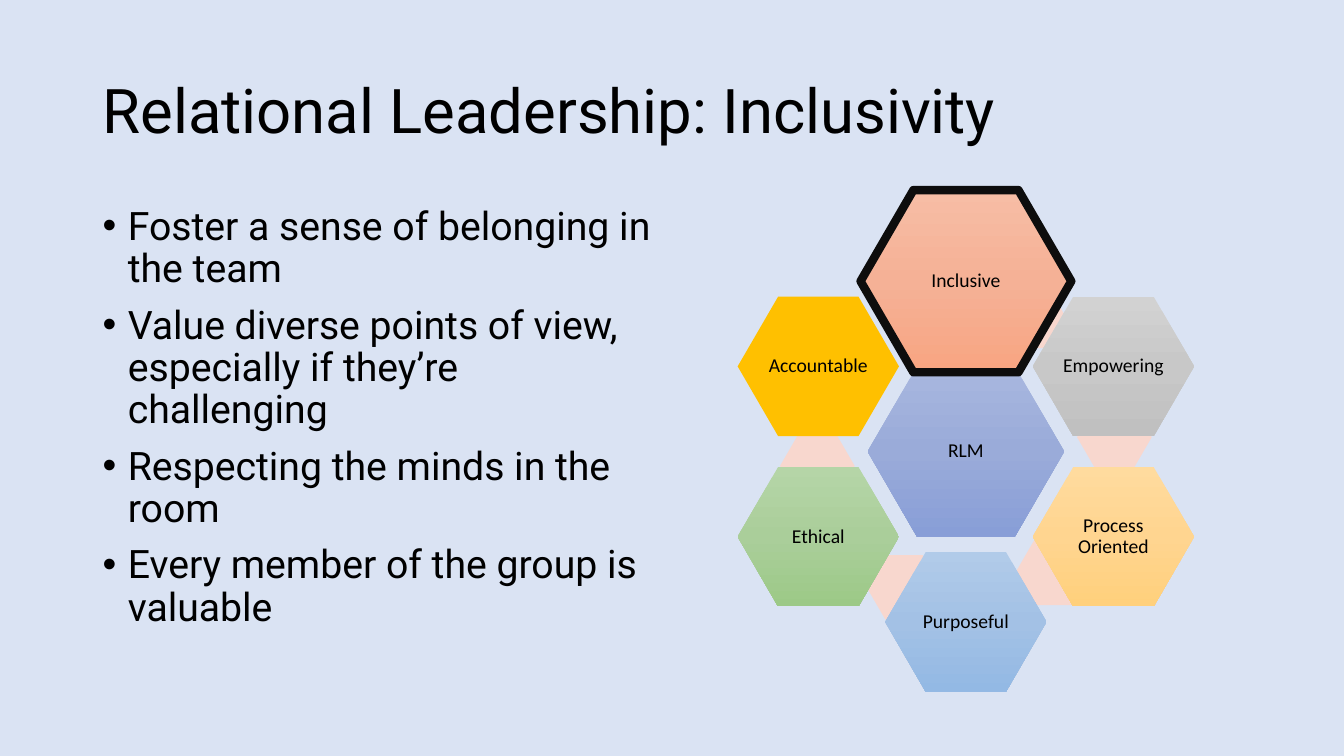
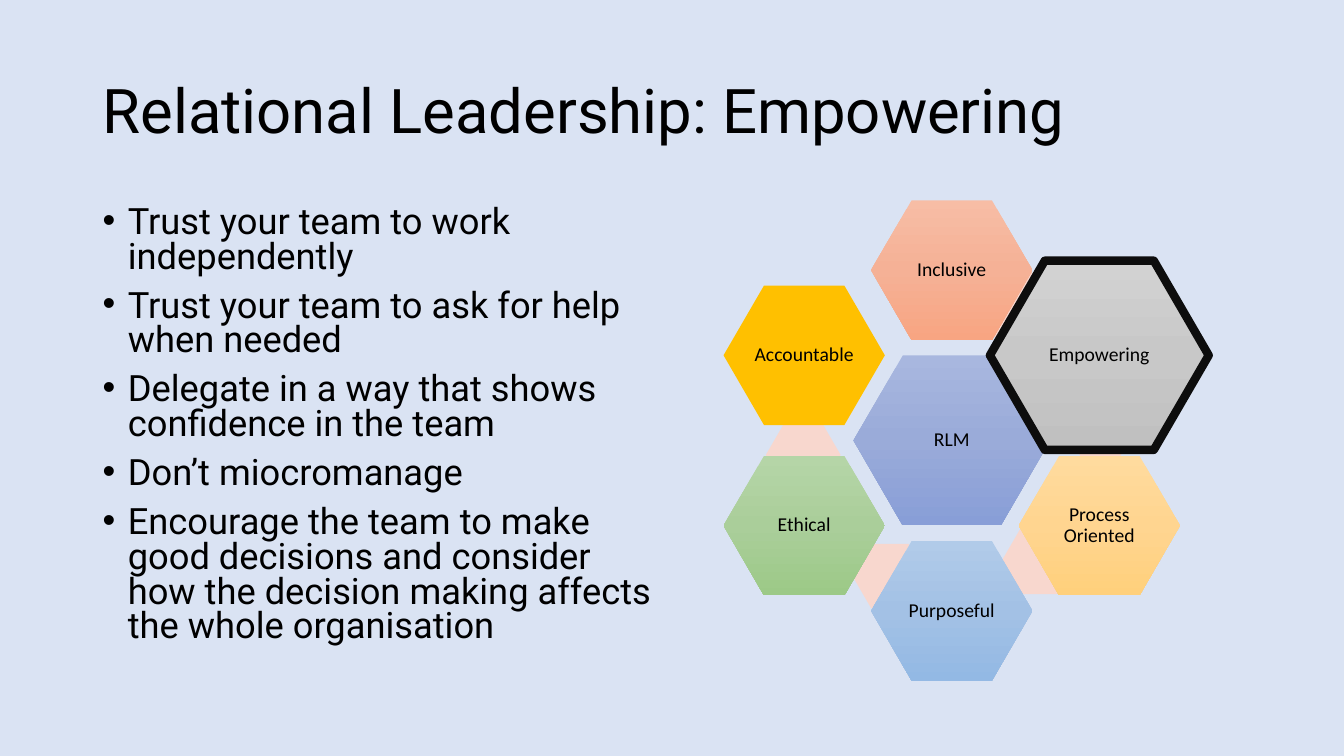
from copy import deepcopy
from math import cos, radians, sin

from lxml.etree import SubElement
from pptx import Presentation
from pptx.dml.color import RGBColor
from pptx.enum.shapes import MSO_SHAPE
from pptx.enum.text import MSO_ANCHOR, PP_ALIGN
from pptx.oxml.ns import qn
from pptx.util import Inches, Pt

BACKGROUND, INK, OUTLINE, LINK = "DAE3F3", "000000", "0D0D0D", "F8D7CE"
TITLE_FONT, LABEL_FONT = "Roboto", "Calibri"
HUB_COLORS = ("A8B7DF", "9AABD9", "889ED7")
VALUES = [
    ("Inclusive", ("F7BDA5", "F5B196", "F8A582")),
    ("Empowering", ("D2D2D2", "C8C8C8", "C0C0C0")),
    ("Process Oriented", ("FFDB9E", "FFD590", "FFD07C")),
    ("Purposeful", ("B1CBE9", "A3C1E5", "93B9E4")),
    ("Ethical", ("B5D5A7", "AACE9A", "9CC987")),
    ("Accountable", ("FFC000",)),
]
HUB_WIDTH, VALUE_WIDTH, LINK_WIDTH, HEIGHT_RATIO = 1.95, 1.6, 0.74, 0.865
VALUE_RADIUS, LINK_RADIUS, LINK_ANGLE = 1.69, 1.48, 24.5


def color(hex_string):
    """Turn a hex string into a colour."""
    return RGBColor.from_string(hex_string)


def set_font(para, name, size):
    """Set the font of a whole paragraph."""
    para.font.name = name
    para.font.size = Pt(size)
    para.font.color.rgb = color(INK)


def add_frame(page, left, top, width, height):
    """Add a wrapping text box and return its text frame."""
    box = page.shapes.add_textbox(Inches(left), Inches(top), Inches(width), Inches(height))
    box.text_frame.word_wrap = True
    return box.text_frame


def add_title(page, text, left, top, width, height):
    """Add the slide title, centred vertically in its box."""
    frame = add_frame(page, left, top, width, height)
    frame.vertical_anchor = MSO_ANCHOR.MIDDLE
    para = frame.paragraphs[0]
    para.text = text
    para.line_spacing = 0.9
    set_font(para, TITLE_FONT, 44)


def add_bullets(page, items, size, spacing, left, top, width, height):
    """Add a bulleted list with hanging indents."""
    frame = add_frame(page, left, top, width, height)
    for index, item in enumerate(items):
        para = frame.add_paragraph() if index else frame.paragraphs[0]
        para.text = item
        para.line_spacing = spacing
        para.space_before = Pt(10 if index else 0)
        properties = para._p.get_or_add_pPr()
        properties.set("marL", str(Inches(0.25)))
        properties.set("indent", str(-Inches(0.25)))
        SubElement(properties, qn("a:buFont")).set("typeface", "Arial")
        SubElement(properties, qn("a:buChar")).set("char", "•")
        set_font(para, TITLE_FONT, size)


def paint(shape, colors):
    """Fill a shape with one colour or a three-colour vertical gradient."""
    if len(colors) == 1:
        shape.fill.solid()
        shape.fill.fore_color.rgb = color(colors[0])
        return
    shape.fill.gradient()
    shape.fill.gradient_angle = 270
    first = shape._element.spPr.find(".//" + qn("a:gs"))
    first.addnext(deepcopy(first))
    for index, (stop, hex_string) in enumerate(zip(shape.fill.gradient_stops, colors)):
        stop.position = index / 2
        stop.color.rgb = color(hex_string)


def add_hexagon(page, center_x, center_y, width, colors, label="", outlined=False):
    """Add a hexagon around a centre, with an optional label and outline."""
    height = width * HEIGHT_RATIO
    shape = page.shapes.add_shape(
        MSO_SHAPE.HEXAGON, Inches(center_x - width / 2), Inches(center_y - height / 2),
        Inches(width), Inches(height))
    shape.adjustments[0] = 0.29
    shape.shadow.inherit = False
    paint(shape, colors)
    if outlined:
        shape.line.color.rgb = color(OUTLINE)
        shape.line.width = Pt(6)
    else:
        shape.line.fill.background()
    if label:
        frame = shape.text_frame
        frame.word_wrap = True
        frame.vertical_anchor = MSO_ANCHOR.MIDDLE
        frame.margin_left = frame.margin_right = Inches(0.02)
        frame.margin_top = frame.margin_bottom = Inches(0.02)
        para = frame.paragraphs[0]
        para.text = label
        para.alignment = PP_ALIGN.CENTER
        para.line_spacing = 0.9
        set_font(para, LABEL_FONT, 14)


def add_model(page, center_x, center_y, focus, focus_width):
    """Add the hub, the links behind the ring and the values, one of them enlarged."""
    def on_ring(radius, degrees):
        """Return the point at a clockwise angle from the top of the ring."""
        angle = radians(degrees)
        return center_x + radius * sin(angle), center_y - radius * cos(angle)

    add_hexagon(page, center_x, center_y, HUB_WIDTH, HUB_COLORS, "RLM")
    for index in range(len(VALUES) - 1):
        add_hexagon(page, *on_ring(LINK_RADIUS, 60 * index + LINK_ANGLE), LINK_WIDTH, (LINK,))
    for index, (label, colors) in enumerate(VALUES):
        focused = label == focus
        width = focus_width if focused else VALUE_WIDTH
        add_hexagon(page, *on_ring(VALUE_RADIUS, 60 * index), width, colors, label, focused)


def add_value_slide(deck, title, items, size, spacing, model):
    """Add a slide with a title, a list and the model."""
    page = deck.slides.add_slide(deck.slide_layouts[6])
    add_title(page, title, 0.92, 0.4, 11.5, 1.45)
    add_bullets(page, items, size, spacing, 0.92, 2, 5.67, 4.76)
    add_model(page, *model)


def main():
    """Build and save the deck."""
    deck = Presentation()
    deck.slide_width, deck.slide_height = Inches(13.33), Inches(7.5)
    background = deck.slide_master.background.fill
    background.solid()
    background.fore_color.rgb = color(BACKGROUND)
    add_value_slide(deck, "Relational Leadership: Inclusivity", [
        "Foster a sense of belonging in the team",
        "Value diverse points of view, especially if they’re challenging",
        "Respecting the minds in the room",
        "Every member of the group is valuable",
    ], 28, 0.9, (9.58, 4.48, "Inclusive", 2.09))
    add_value_slide(deck, "Relational Leadership: Empowering", [
        "Trust your team to work independently",
        "Trust your team to ask for help when needed",
        "Delegate in a way that shows confidence in the team",
        "Don’t miocromanage",
        "Encourage the team to make good decisions and consider how the decision making "
        "affects the whole organisation",
    ], 25.9, 0.8, (9.44, 4.37, "Empowering", 2.17))
    deck.save("out.pptx")


if __name__ == "__main__":
    main()
